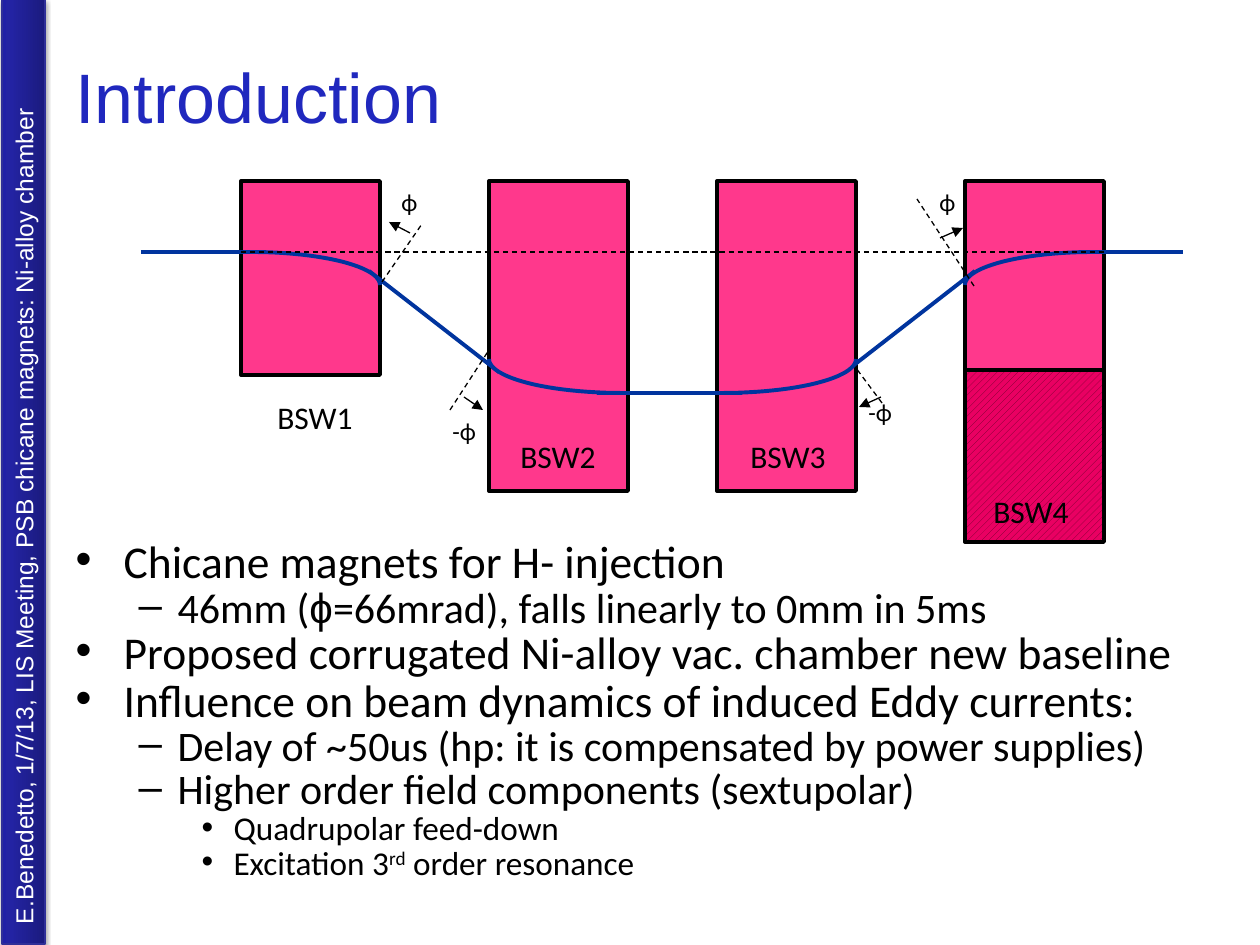
import math
import pptx
import pptx.util
import pptx.dml.color
import pptx.enum.dml
import pptx.enum.shapes
import pptx.enum.text
import pptx.oxml
import pptx.oxml.ns

RGBColor = pptx.dml.color.RGBColor
BLACK = RGBColor(0x00, 0x00, 0x00)
WHITE = RGBColor(0xFF, 0xFF, 0xFF)
TITLE_BLUE = RGBColor(0x20, 0x28, 0xBE)
BAR_EDGE = RGBColor(0x2F, 0x2F, 0x98)
BEAM_BLUE = RGBColor(0x00, 0x34, 0x9E)
PINK = RGBColor(0xFF, 0x38, 0x8C)
HATCH_BACK = RGBColor(0xE9, 0x00, 0x62)
HATCH_LINE = RGBColor(0x72, 0x00, 0x2C)
BAR_STOPS = [
    (0, RGBColor(0x1B, 0x1B, 0x7E)),
    (80, RGBColor(0x23, 0x23, 0xA3)),
    (100, RGBColor(0x20, 0x20, 0xA6)),
]

TITLE = "Introduction"
SIDE_TEXT = "E.Benedetto, 1/7/13, LIS Meeting, PSB chicane magnets: Ni-alloy chamber"
BULLETS = [
    (0, ["Chicane magnets for H- injection"]),
    (1, ["46mm (", "ϕ", "=66mrad), falls linearly to 0mm in 5ms"]),
    (0, ["Proposed corrugated Ni-alloy vac. chamber new baseline"]),
    (0, ["Influence on beam dynamics of induced Eddy currents:"]),
    (1, ["Delay of ~50us (hp: it is compensated by power supplies)"]),
    (1, ["Higher order field components (sextupolar)"]),
    (2, ["Quadrupolar feed-down"]),
    (2, ["Excitation 3", "rd", " order resonance"]),
]
LEVELS = [(26, 48, 48), (24, 102, 39), (19, 158, 32)]

MAGNET_TOP, MAGNET_WIDTH = 181, 139
MAGNETS = [(241, 194), (489, 310), (717, 310), (965, 360)]
HATCHED = (965, 370, 139, 172)

BEAM_LINES = [
    (141, 252, 251, 252),
    (369, 271, 499, 372),
    (597, 393, 742, 393),
    (845, 372, 975, 271),
    (1084, 252, 1183, 252),
]
BEAM_CURVES = [
    (251, 252, 380, 285),
    (722, 393, 856, 359),
    (622, 393, 489, 359),
    (1094, 252, 965, 285),
]
DASHES = [
    (241, 252, 1104, 252),
    (450, 410, 489, 350),
    (974, 286, 917, 199),
    (882, 403, 856, 368),
    (382, 282, 422, 224),
]
ARROWS = [
    (410, 233, 389, 222),
    (940, 238, 963, 228),
    (881, 397, 859, 407),
    (464, 397, 483, 410),
]
ANGLES = [
    ("ϕ", 389, 181, 39),
    ("ϕ", 927, 181, 39),
    ("-ϕ", 440, 410, 49),
    ("-ϕ", 856, 391, 49),
]
MAGNET_NAMES = [
    ("BSW4", 981, 486),
    ("BSW3", 738, 431),
    ("BSW2", 508, 431),
    ("BSW1", 265, 392),
]


def px(value):
    return round(value * 914400 / 126)


def add_text(paragraph, text, size, font, color):
    run = paragraph.add_run()
    run.text = text
    run.font.size = pptx.util.Pt(size)
    run.font.name = font
    run.font.color.rgb = color
    return run


def set_line(shape, color, width):
    shape.line.color.rgb = color
    shape.line.width = pptx.util.Pt(width)


def add_box(slide, left, top, width, height):
    shape = slide.shapes.add_shape(
        pptx.enum.shapes.MSO_SHAPE.RECTANGLE, px(left), px(top), px(width), px(height))
    shape.shadow.inherit = False
    set_line(shape, BLACK, 2.25)
    shape.fill.solid()
    shape.fill.fore_color.rgb = PINK
    return shape


def add_line(slide, ends, color, width, dashed=False, arrow=False):
    connector = slide.shapes.add_connector(
        pptx.enum.shapes.MSO_CONNECTOR.STRAIGHT, *map(px, ends))
    set_line(connector, color, width)
    if dashed:
        connector.line.dash_style = pptx.enum.dml.MSO_LINE.DASH
    if arrow:
        tail = pptx.oxml.parse_xml(
            f'<a:tailEnd {pptx.oxml.ns.nsdecls("a")} type="triangle"/>')
        connector.line._get_or_add_ln().append(tail)
    properties = connector._element.spPr
    properties.append(pptx.oxml.parse_xml(f'<a:effectLst {pptx.oxml.ns.nsdecls("a")}/>'))


def add_curve(slide, start_x, start_y, end_x, end_y, steps=24):
    points = []
    for step in range(1, steps + 1):
        angle = math.pi / 2 * step / steps
        points.append((px(start_x + (end_x - start_x) * math.sin(angle)),
                       px(end_y - (end_y - start_y) * math.cos(angle))))
    builder = slide.shapes.build_freeform(px(start_x), px(start_y))
    builder.add_line_segments(points, close=False)
    shape = builder.convert_to_shape()
    shape.shadow.inherit = False
    shape.fill.solid()
    shape.fill.fore_color.rgb = PINK
    set_line(shape, BEAM_BLUE, 2.25)


def add_label(slide, text, left, top, width, height, size, wrap):
    shape = slide.shapes.add_textbox(px(left), px(top), px(width), px(height))
    shape.text_frame.word_wrap = wrap
    add_text(shape.text_frame.paragraphs[0], text, size, "Calibri", BLACK)


def add_side_bar(slide):
    shape = add_box(slide, -449, 450, 945, 43)
    shape.rotation = 270
    set_line(shape, BAR_EDGE, 0.75)
    namespace = pptx.oxml.ns.nsdecls("a")
    stops = "".join(
        f'<a:gs pos="{position * 1000}"><a:srgbClr val="{color}"/></a:gs>'
        for position, color in BAR_STOPS)
    properties = shape._element.spPr
    solid = properties.find(pptx.oxml.ns.qn("a:solidFill"))
    properties.replace(solid, pptx.oxml.parse_xml(
        f'<a:gradFill {namespace} rotWithShape="1"><a:gsLst>{stops}</a:gsLst>'
        '<a:lin ang="16200000" scaled="0"/></a:gradFill>'))
    effects = properties.find(pptx.oxml.ns.qn("a:effectLst"))
    effects.append(pptx.oxml.parse_xml(
        f'<a:outerShdw {namespace} blurRad="39370" dist="22860" dir="5400000" '
        'rotWithShape="0"><a:srgbClr val="000000"><a:alpha val="35000"/>'
        '</a:srgbClr></a:outerShdw>'))
    frame = shape.text_frame
    frame.margin_left = px(20)
    paragraph = frame.paragraphs[0]
    paragraph.alignment = pptx.enum.text.PP_ALIGN.LEFT
    add_text(paragraph, SIDE_TEXT, 14, "Arial", WHITE)


def place(shape, left, top, width, height):
    shape.left, shape.top, shape.width, shape.height = map(px, (left, top, width, height))
    shape.text_frame.auto_size = pptx.enum.text.MSO_AUTO_SIZE.NONE


def fill_placeholders(slide):
    title, body = slide.placeholders
    place(title, 63, 16, 1182, 158)
    title.text_frame.vertical_anchor = pptx.enum.text.MSO_ANCHOR.MIDDLE
    paragraph = title.text_frame.paragraphs[0]
    paragraph.alignment = pptx.enum.text.PP_ALIGN.LEFT
    add_text(paragraph, TITLE, 40, "Arial", TITLE_BLUE)

    place(body, 63, 542, 1182, 358)
    frame = body.text_frame
    for index, (level, texts) in enumerate(BULLETS):
        paragraph = frame.add_paragraph() if index else frame.paragraphs[0]
        size, margin, hanging = LEVELS[level]
        paragraph.level = level
        paragraph.line_spacing = 0.7
        properties = paragraph._p.get_or_add_pPr()
        properties.set("marL", str(px(margin)))
        properties.set("indent", str(-px(hanging)))
        for text in texts:
            font = "Arial" if text == "ϕ" else "Calibri"
            run = add_text(paragraph, text, size, font, BLACK)
            if text == "rd":
                run.font._element.set("baseline", "30000")


def main():
    presentation = pptx.Presentation()
    presentation.slide_width, presentation.slide_height = px(1260), px(945)
    slide = presentation.slides.add_slide(presentation.slide_layouts[1])
    fill_placeholders(slide)
    add_side_bar(slide)
    for left, height in MAGNETS:
        add_box(slide, left, MAGNET_TOP, MAGNET_WIDTH, height)
    for ends in BEAM_LINES:
        add_line(slide, ends, BEAM_BLUE, 2.25)
    for ends in BEAM_CURVES:
        add_curve(slide, *ends)
    for ends in DASHES:
        add_line(slide, ends, BLACK, 0.75, dashed=True)
    for ends in ARROWS:
        add_line(slide, ends, BLACK, 0.75, arrow=True)
    hatched = add_box(slide, *HATCHED)
    hatched.fill.patterned()
    hatched.fill.pattern = pptx.enum.dml.MSO_PATTERN.WIDE_UPWARD_DIAGONAL
    hatched.fill.fore_color.rgb = HATCH_LINE
    hatched.fill.back_color.rgb = HATCH_BACK
    for text, left, top, width in ANGLES:
        add_label(slide, text, left, top, width, 42, 14, True)
    for text, left, top in MAGNET_NAMES:
        add_label(slide, text, left, top, 101, 50, 18, False)
    presentation.save("out.pptx")


if __name__ == "__main__":
    main()
